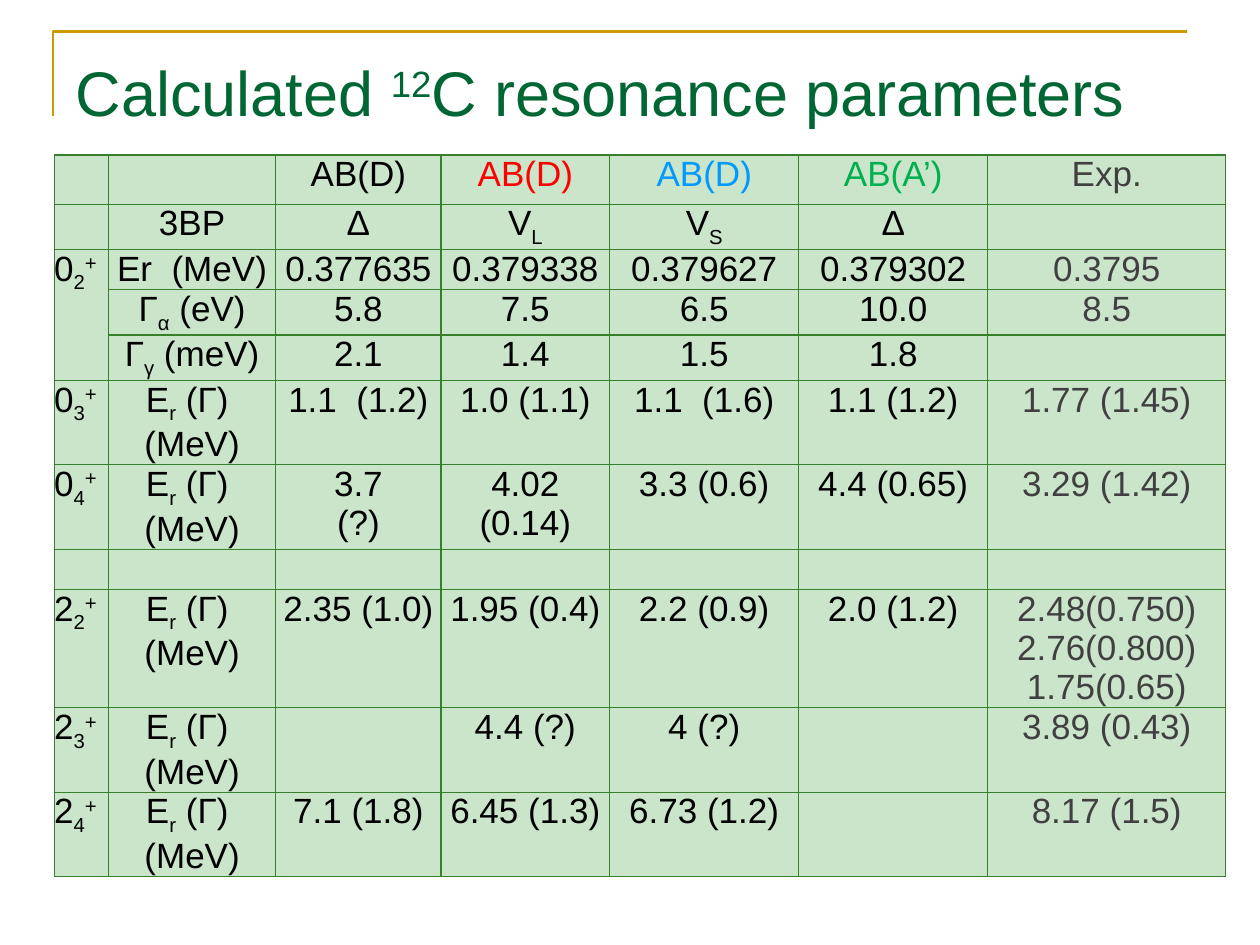
from typing import NamedTuple

from lxml import etree
from pptx import Presentation
from pptx.dml.color import RGBColor
from pptx.enum.text import MSO_ANCHOR, PP_ALIGN
from pptx.oxml.ns import qn
from pptx.util import Inches, Pt

GOLD = RGBColor(0xCC, 0x99, 0x00)
TITLE_GREEN = RGBColor(0x00, 0x66, 0x33)
CELL_GREEN = RGBColor(0xCA, 0xE5, 0xC9)
BORDER_GREEN = RGBColor(0x38, 0x80, 0x2C)
BLACK = RGBColor(0x00, 0x00, 0x00)
RED = RGBColor(0xFF, 0x00, 0x00)
BLUE = RGBColor(0x00, 0x99, 0xFF)
GREEN = RGBColor(0x00, 0xB0, 0x50)
GRAY = RGBColor(0x40, 0x40, 0x40)

FONT = "Arial"
BASELINES = {"_": "-25000", "^": "30000"}


class Column(NamedTuple):
    width: float
    header: str
    header_color: RGBColor = BLACK
    body_color: RGBColor = BLACK
    align: PP_ALIGN = PP_ALIGN.CENTER


class Row(NamedTuple):
    height: float
    texts: list[str]


COLUMNS = [
    Column(0.43, "", align=PP_ALIGN.LEFT),
    Column(1.33, ""),
    Column(1.31, "AB(D)"),
    Column(1.34, "AB(D)", RED),
    Column(1.5, "AB(D)", BLUE),
    Column(1.5, "AB(A’)", GREEN),
    Column(1.89, "Exp.", GRAY, GRAY),
]

# "|" separates runs; a run that starts with "_" is lowered, with "^" raised.
ENERGY = "E|_r| (Γ)  (MeV)"
ROWS = [
    Row(0.39, [column.header for column in COLUMNS]),
    Row(0.36, ["", "3BP", "Δ", "V|_L", "V|_S", "Δ", ""]),
    Row(0.32, ["0|_2|^+", "Er  (MeV)", "0.377635", "0.379338", "0.379627",
               "0.379302", "0.3795"]),
    Row(0.36, ["", "Γ|_α| (eV)", "5.8", "7.5", "6.5", "10.0", "8.5"]),
    Row(0.36, ["", "Γ|_γ| (meV)", "2.1", "1.4", "1.5", "1.8", ""]),
    Row(0.67, ["0|_3|^+", ENERGY, "1.1  (1.2)", "1.0 (1.1)", "1.1  (1.6)",
               "1.1 (1.2)", "1.77 (1.45)"]),
    Row(0.67, ["0|_4|^+", ENERGY, "3.7\v(?)", "4.02 (0.14)", "3.3 (0.6)",
               "4.4 (0.65)", "3.29 (1.42)"]),
    Row(0.32, [""] * len(COLUMNS)),
    Row(0.94, ["2|_2|^+", ENERGY, "2.35 (1.0)", "1.95 (0.4)", "2.2 (0.9)",
               "2.0 (1.2)", "2.48(0.750)\n2.76(0.800)\n1.75(0.65)"]),
    Row(0.67, ["2|_3|^+", ENERGY, "", "4.4 (?)", "4 (?)", "", "3.89 (0.43)"]),
    Row(0.67, ["2|_4|^+", ENERGY, "7.1 (1.8)", "6.45 (1.3)", "6.73 (1.2)", "",
               "8.17 (1.5)"]),
]


def write_runs(paragraph, markup: str, size: float, color: RGBColor) -> None:
    pieces = markup.split("|")
    paragraph.text = pieces[0]
    for piece in pieces[1:]:
        run = paragraph.add_run()
        run.text = piece.lstrip("_^")
        if piece[0] in BASELINES:
            run.font._element.set("baseline", BASELINES[piece[0]])
    for run in paragraph.runs:
        run.font.size = Pt(size)
        run.font.name = FONT
        run.font.color.rgb = color


def set_borders(cell) -> None:
    properties = cell._tc.get_or_add_tcPr()
    for index, side in enumerate(("a:lnL", "a:lnR", "a:lnT", "a:lnB")):
        line = etree.Element(qn(side), w=str(Pt(0.75)))
        fill = etree.SubElement(line, qn("a:solidFill"))
        etree.SubElement(fill, qn("a:srgbClr"), val=str(BORDER_GREEN))
        properties.insert(index, line)


def fill_cell(cell, text: str, color: RGBColor, align: PP_ALIGN) -> None:
    cell.margin_left = cell.margin_right = 0
    cell.margin_top = cell.margin_bottom = 0
    cell.fill.solid()
    cell.fill.fore_color.rgb = CELL_GREEN
    set_borders(cell)
    if not text:
        return
    cell.text_frame.text = text
    for paragraph, markup in zip(cell.text_frame.paragraphs, text.split("\n")):
        paragraph.alignment = align
        write_runs(paragraph, markup, 20, color)


def add_title(slide) -> None:
    title = slide.shapes.title
    title.left, title.top = Inches(0.5), Inches(0.3)
    title.width, title.height = Inches(9.38), Inches(0.85)
    title.text_frame.vertical_anchor = MSO_ANCHOR.MIDDLE
    paragraph = title.text_frame.paragraphs[0]
    write_runs(paragraph, "Calculated |^12|C resonance parameters", 36, TITLE_GREEN)
    paragraph.alignment = PP_ALIGN.LEFT


def add_corner_rule(slide) -> None:
    builder = slide.shapes.build_freeform(Inches(0.42), Inches(0.92))
    builder.add_line_segments(
        [(Inches(0.42), Inches(0.25)), (Inches(9.42), Inches(0.25))], close=False)
    rule = builder.convert_to_shape()
    rule.shadow.inherit = False
    rule.fill.background()
    rule.line.color.rgb = GOLD
    rule.line.width = Pt(1.5)


def add_resonance_table(slide) -> None:
    table = slide.shapes.add_table(
        len(ROWS), len(COLUMNS), Inches(0.43), Inches(1.23),
        Inches(sum(column.width for column in COLUMNS)),
        Inches(sum(row.height for row in ROWS))).table
    table.first_row = table.horz_banding = False
    for table_column, column in zip(table.columns, COLUMNS):
        table_column.width = Inches(column.width)
    for row_index, row in enumerate(ROWS):
        table.rows[row_index].height = Inches(row.height)
        for column_index, (column, text) in enumerate(zip(COLUMNS, row.texts)):
            color = column.body_color if row_index else column.header_color
            fill_cell(table.cell(row_index, column_index), text, color, column.align)
    table.cell(2, 0).merge(table.cell(4, 0))


def main() -> None:
    presentation = Presentation()
    presentation.slide_width = Inches(10)
    presentation.slide_height = Inches(7.5)
    slide = presentation.slides.add_slide(presentation.slide_layouts[5])
    add_corner_rule(slide)
    add_title(slide)
    add_resonance_table(slide)
    presentation.save("out.pptx")


if __name__ == "__main__":
    main()
